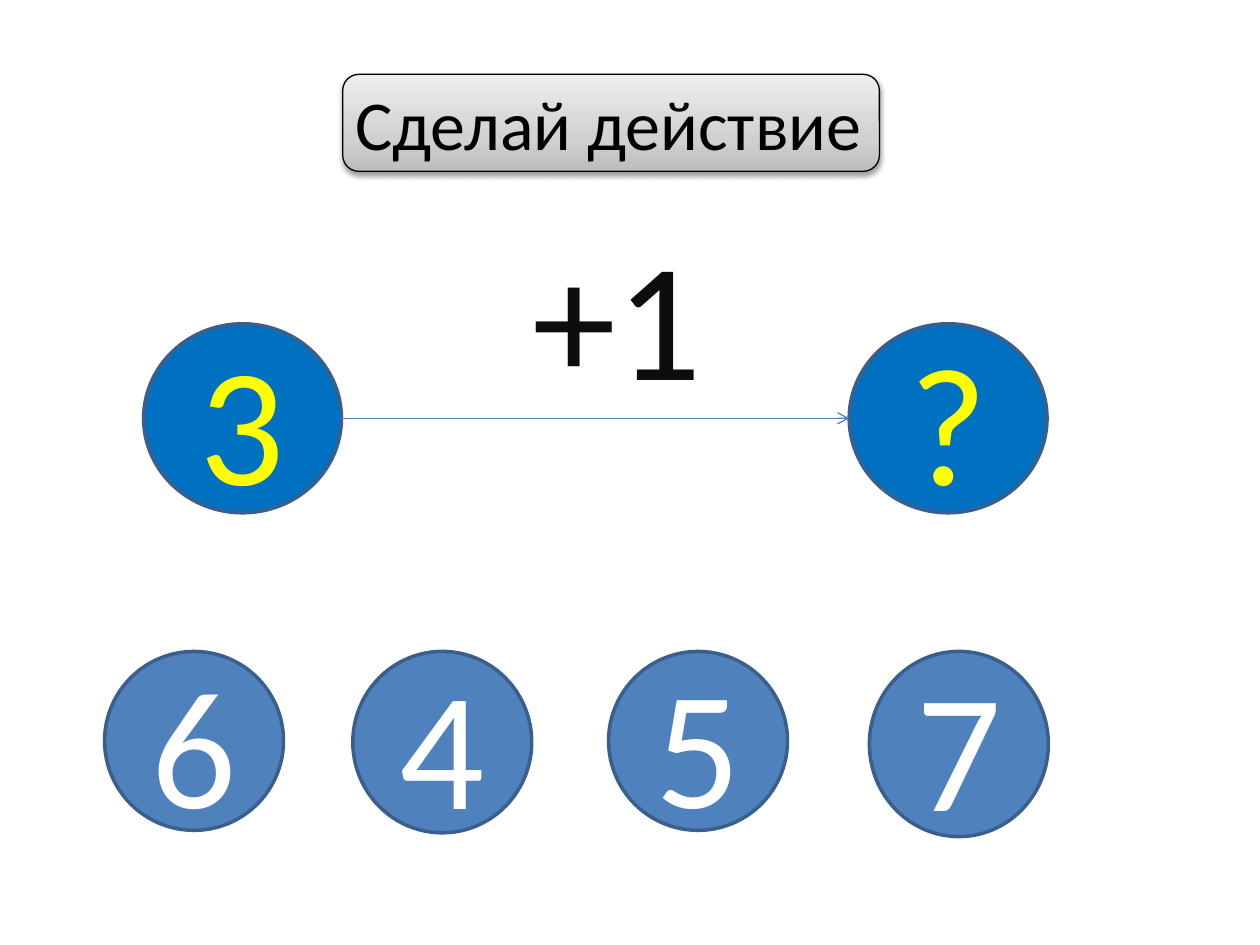
from dataclasses import dataclass

from pptx import Presentation
from pptx.dml.color import RGBColor
from pptx.enum.shapes import MSO_CONNECTOR, MSO_SHAPE
from pptx.enum.text import MSO_ANCHOR, MSO_AUTO_SIZE, PP_ALIGN
from pptx.oxml import parse_xml
from pptx.oxml.ns import nsdecls
from pptx.util import Inches, Pt

OVAL, NODE = MSO_SHAPE.OVAL, MSO_SHAPE.FLOWCHART_CONNECTOR
ROUNDED, STRAIGHT = MSO_SHAPE.ROUNDED_RECTANGLE, MSO_CONNECTOR.STRAIGHT
TOP, MIDDLE = MSO_ANCHOR.TOP, MSO_ANCHOR.MIDDLE
LEFT, CENTER = PP_ALIGN.LEFT, PP_ALIGN.CENTER
GROW = MSO_AUTO_SIZE.SHAPE_TO_FIT_TEXT

FONT = "Calibri"
BIG, TITLE_SIZE = 96, 40
TASK_TOP, TASK_W, TASK_H = 2.57, 1.57, 1.5
ANSWER_TOP, ANSWER_W = 5.17, 1.42
TITLE_BOX = (2.72, 0.59, 4.26, 0.77)
PLATE_STOPS = ((0, "BDBDBD"), (35, "D1D1D1"), (100, "EEEEEE"))


@dataclass(frozen=True)
class Disc:
    text: str
    left: float
    top: float
    width: float
    height: float
    fill: str
    color: str
    kind: MSO_SHAPE = OVAL


def task(text: str, left: float) -> Disc:
    return Disc(text, left, TASK_TOP, TASK_W, TASK_H, "0070C0", "FFFF00")


def answer(text: str, left: float, height: float = ANSWER_W, kind=OVAL) -> Disc:
    return Disc(text, left, ANSWER_TOP, ANSWER_W, height, "4F81BD", "FFFFFF", kind)


TASKS = (task("3", 1.14), task("?", 6.74))
ANSWERS = (
    answer("6", 0.83),
    answer("4", 2.8, 1.44, NODE),
    answer("5", 4.83),
    answer("7", 6.9, 1.47),
)


def rgb(value: str) -> RGBColor:
    return RGBColor.from_string(value)


def box(*lengths: float) -> list:
    return [Inches(length) for length in lengths]


def write(sp, text: str, size: float, color: str, align=LEFT, anchor=TOP) -> None:
    tf = sp.text_frame
    tf.text = text
    tf.vertical_anchor = anchor
    p = tf.paragraphs[0]
    p.alignment = align
    p.font.name, p.font.size = FONT, Pt(size)
    p.font.color.rgb = rgb(color)


def set_line(line, color: str, width: float) -> None:
    line.color.rgb = rgb(color)
    line.width = Pt(width)


def add_disc(shapes, disc: Disc) -> None:
    sp = shapes.add_shape(disc.kind, *box(disc.left, disc.top, disc.width, disc.height))
    sp.shadow.inherit = False
    sp.fill.solid()
    sp.fill.fore_color.rgb = rgb(disc.fill)
    set_line(sp.line, "3A5F8C", 2)
    write(sp, disc.text, BIG, disc.color, CENTER, MIDDLE)


def add_plate(shapes) -> None:
    """Grey gradient button with a soft shadow below it."""
    sp = shapes.add_shape(ROUNDED, *box(*TITLE_BOX))
    stops = "".join(
        f'<a:gs pos="{pos * 1000}"><a:srgbClr val="{color}"/></a:gs>'
        for pos, color in PLATE_STOPS
    )
    props = sp._element.spPr
    props.insert(2, parse_xml(
        f'<a:gradFill {nsdecls("a")} rotWithShape="1"><a:gsLst>{stops}</a:gsLst>'
        '<a:lin ang="16200000" scaled="1"/></a:gradFill>'))
    set_line(sp.line, "000000", 0.75)
    props.append(parse_xml(
        f'<a:effectLst {nsdecls("a")}>'
        f'<a:outerShdw blurRad="{Pt(3.1)}" dist="{Pt(1.6)}" dir="5400000" rotWithShape="0">'
        '<a:srgbClr val="000000"><a:alpha val="38000"/></a:srgbClr>'
        '</a:outerShdw></a:effectLst>'))


def add_arrow(shapes, start: Disc, end: Disc) -> None:
    y = start.top + start.height / 2
    cxn = shapes.add_connector(STRAIGHT, *box(start.left + start.width, y, end.left, y))
    set_line(cxn.line, "4B7EBC", 0.75)
    cxn.line._get_or_add_ln().append(
        parse_xml(f'<a:tailEnd {nsdecls("a")} type="arrow"/>'))
    cxn._element.spPr.append(parse_xml(f'<a:effectLst {nsdecls("a")}/>'))


def fit_to_text(sp) -> None:
    sp.text_frame.word_wrap = False
    sp.text_frame.auto_size = GROW


def main() -> None:
    prs = Presentation()
    prs.slide_width, prs.slide_height = box(10, 7.5)
    s = prs.slides.add_slide(prs.slide_layouts[5])
    shapes = s.shapes

    add_plate(shapes)
    for disc in TASKS:
        add_disc(shapes, disc)
    add_arrow(shapes, *TASKS)

    step = shapes.add_textbox(*box(4.13, 1.64, 1.56, 1.72))
    write(step, "+1", BIG, "0D0D0D")
    fit_to_text(step)

    for disc in ANSWERS:
        add_disc(shapes, disc)

    title = shapes.title
    title.left, title.top, title.width, title.height = box(*TITLE_BOX)
    write(title, "Сделай действие", TITLE_SIZE, "000000")
    fit_to_text(title)
    shapes._spTree.append(title._element)  # bring the title in front of its plate

    prs.save("out.pptx")


if __name__ == "__main__":
    main()
